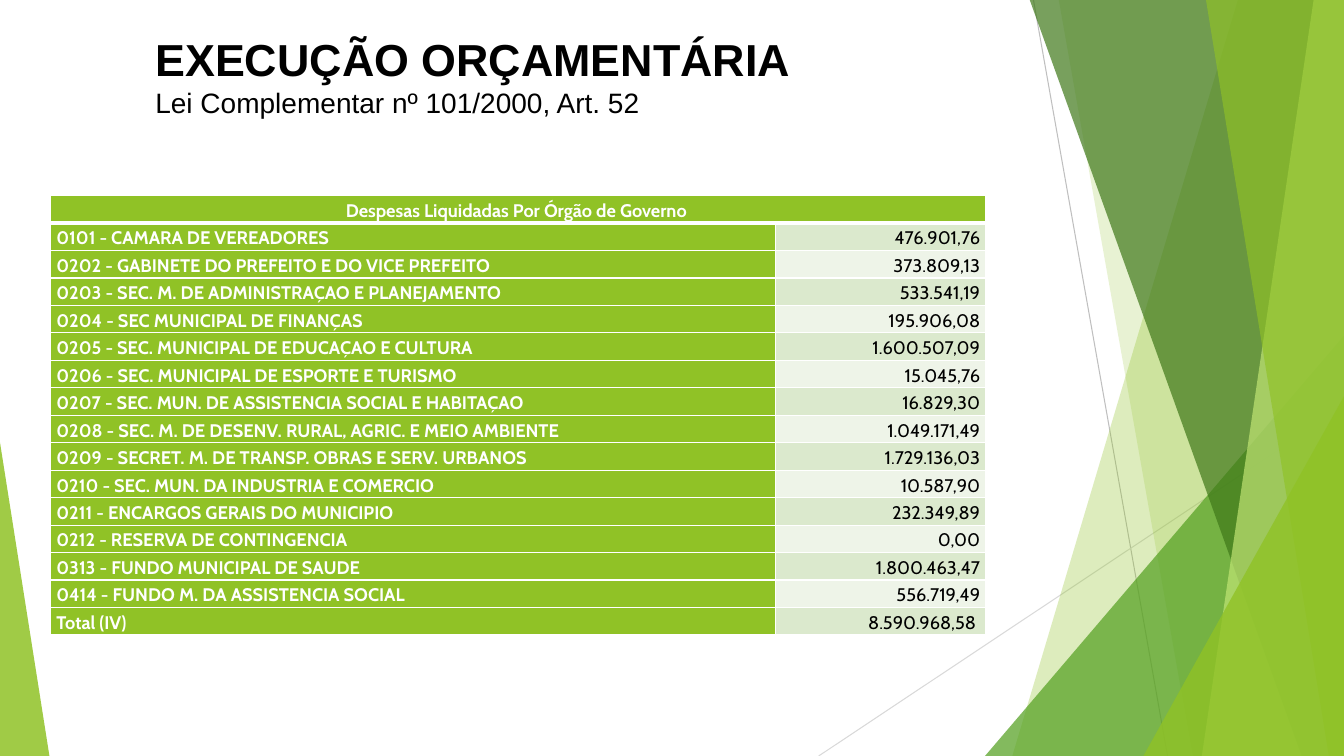
from lxml import etree
from pptx import Presentation
from pptx.dml.color import RGBColor
from pptx.enum.shapes import MSO_CONNECTOR, MSO_SHAPE
from pptx.enum.text import MSO_ANCHOR, MSO_AUTO_SIZE, PP_ALIGN
from pptx.oxml.ns import qn
from pptx.util import Inches, Pt

LEFT, CENTER, RIGHT = PP_ALIGN.LEFT, PP_ALIGN.CENTER, PP_ALIGN.RIGHT
STRAIGHT, TRIANGLE = MSO_CONNECTOR.STRAIGHT, MSO_SHAPE.ISOSCELES_TRIANGLE
MIDDLE, TOP = MSO_ANCHOR.MIDDLE, MSO_ANCHOR.TOP
GREEN, WHITE, BLACK = "90C226", "FFFFFF", "000000"
BANDS = ["EEF4E8", "DBE9CD"]


def rgb(color):
    return RGBColor.from_string(color)


def paint(s, color, alpha):
    """Fill a shape with a see-through colour (alpha in percent), without line or shadow."""
    s.shadow.inherit = False
    s.line.fill.background()
    s.fill.solid()
    s.fill.fore_color.rgb = rgb(color)
    clr = s.fill._xPr.find(qn("a:solidFill"))[0]
    etree.SubElement(clr, qn("a:alpha"), val=str(alpha * 1000))


prs = Presentation()
prs.slide_width, prs.slide_height = Inches(13.33), Inches(7.5)
slide = prs.slides.add_slide(prs.slide_layouts[5])
shapes = slide.shapes

# Thin background lines
for x1, y1, x2, y2, color in [(10.25, 0, 11.58, 7.5, "BFBFBF"),
                              (13.33, 4.03, 8.12, 7.5, "D9D9D9")]:
    line = shapes.add_connector(STRAIGHT, Inches(x1), Inches(y1), Inches(x2), Inches(y2))
    line.line.color.rgb = rgb(color)
    line.line.width = Pt(0.75)
    etree.SubElement(line._element.spPr, qn("a:effectLst"))

# Green facets: bands run from the top to the bottom at the right edge
facets = [
    ("band", (12.28, 10.04), GREEN, 30),
    ("band", (10.5, 11.83), GREEN, 20),
    ("triangle", (9.77, 3.33, 3.56, 4.17, 1), "54A021", 72),
    ("band", (10.21, 12.91), "3F7819", 70),
    ("band", (13.03, 11.92), "C0E474", 70),
    ("band", (11.96, 13.18), GREEN, 65),
    ("triangle", (11.34, 3.93, 1.99, 3.57, 1), GREEN, 80),
    ("triangle", (0, 4.39, 0.49, 3.11, 0), GREEN, 85),
]
for kind, geometry, color, alpha in facets:
    if kind == "band":
        x_top, x_bottom = geometry
        builder = shapes.build_freeform(Inches(x_top), Inches(-0.01))
        corners = [(13.33, -0.01), (13.33, 7.5), (x_bottom, 7.5)]
        builder.add_line_segments([(Inches(x), Inches(y)) for x, y in corners], close=True)
        s = builder.convert_to_shape()
    else:
        *box, apex = geometry
        s = shapes.add_shape(TRIANGLE, *[Inches(v) for v in box])
        s.adjustments[0] = apex
    paint(s, color, alpha)

# Expenses table
rows = [
    ("Despesas Liquidadas Por Órgão de Governo ", ""),
    ("0101 - CAMARA DE VEREADORES", "476.901,76"),
    ("0202 - GABINETE DO PREFEITO E DO VICE PREFEITO", "373.809,13"),
    ("0203 - SEC. M. DE ADMINISTRAÇAO E PLANEJAMENTO", "533.541,19"),
    ("0204 - SEC MUNICIPAL DE FINANÇAS", "195.906,08"),
    ("0205 - SEC. MUNICIPAL DE EDUCAÇAO E CULTURA", "1.600.507,09"),
    ("0206 - SEC. MUNICIPAL DE ESPORTE E TURISMO", "15.045,76"),
    ("0207 - SEC. MUN. DE ASSISTENCIA SOCIAL E HABITAÇAO", "16.829,30"),
    ("0208 - SEC. M. DE DESENV. RURAL, AGRIC. E MEIO AMBIENTE", "1.049.171,49"),
    ("0209 - SECRET. M. DE TRANSP. OBRAS E SERV. URBANOS", "1.729.136,03"),
    ("0210 - SEC. MUN. DA INDUSTRIA E COMERCIO", "10.587,90"),
    ("0211 - ENCARGOS GERAIS DO MUNICIPIO", "232.349,89"),
    ("0212 - RESERVA DE CONTINGENCIA", "0,00"),
    ("0313 - FUNDO MUNICIPAL DE SAUDE", "1.800.463,47"),
    ("0414 - FUNDO M. DA ASSISTENCIA SOCIAL", "556.719,49"),
    ("Total (IV)", "8.590.968,58 "),
]
table = shapes.add_table(len(rows), 2, Inches(0.5), Inches(1.94),
                         Inches(9.28), Inches(4.36)).table
table.columns[0].width, table.columns[1].width = Inches(7.19), Inches(2.09)
table.cell(0, 0).merge(table.cell(0, 1))
for i, row in enumerate(rows):
    for j, text in enumerate(row):
        cell = table.cell(i, j)
        is_value = i > 0 and j == 1
        tcPr = cell._tc.get_or_add_tcPr()
        for side in ("lnL", "lnR", "lnT", "lnB"):
            under_header = (i, side) in [(0, "lnB"), (1, "lnT")]
            ln = etree.SubElement(tcPr, qn("a:" + side), w=str(Pt(3 if under_header else 1)))
            fill = etree.SubElement(ln, qn("a:solidFill"))
            etree.SubElement(fill, qn("a:srgbClr"), val=WHITE)
        cell.fill.solid()
        cell.fill.fore_color.rgb = rgb(BANDS[i % 2] if is_value else GREEN)
        cell.vertical_anchor = MIDDLE
        cell.margin_left = cell.margin_right = Inches(0.06)
        cell.margin_top = cell.margin_bottom = Inches(0.01)
        if not text:
            continue
        cell.text_frame.text = text
        p = cell.text_frame.paragraphs[0]
        p.alignment = CENTER if i == 0 else RIGHT if is_value else LEFT
        p.line_spacing = 1.15
        font = p.runs[0].font
        font.name, font.size, font.bold = "Cabin", Pt(13), not is_value
        font.color.rgb = rgb(BLACK if is_value else WHITE)

# Title and subtitle
title = shapes.title
title.left, title.top = Inches(1.44), Inches(0.23)
title.width, title.height = Inches(7.56), Inches(1.28)
tf = title.text_frame
tf.auto_size = MSO_AUTO_SIZE.NONE
tf.word_wrap = True
tf.vertical_anchor = TOP
tf.margin_top = Inches(0.08)
tf.text = "EXECUÇÃO ORÇAMENTÁRIA\nLei Complementar nº 101/2000, Art. 52"
for p, size, bold in zip(tf.paragraphs, (32, 20), (True, False)):
    p.alignment = LEFT
    font = p.runs[0].font
    font.name, font.size, font.bold = "Arial", Pt(size), bold
    font.color.rgb = rgb(BLACK)

prs.save("out.pptx")
